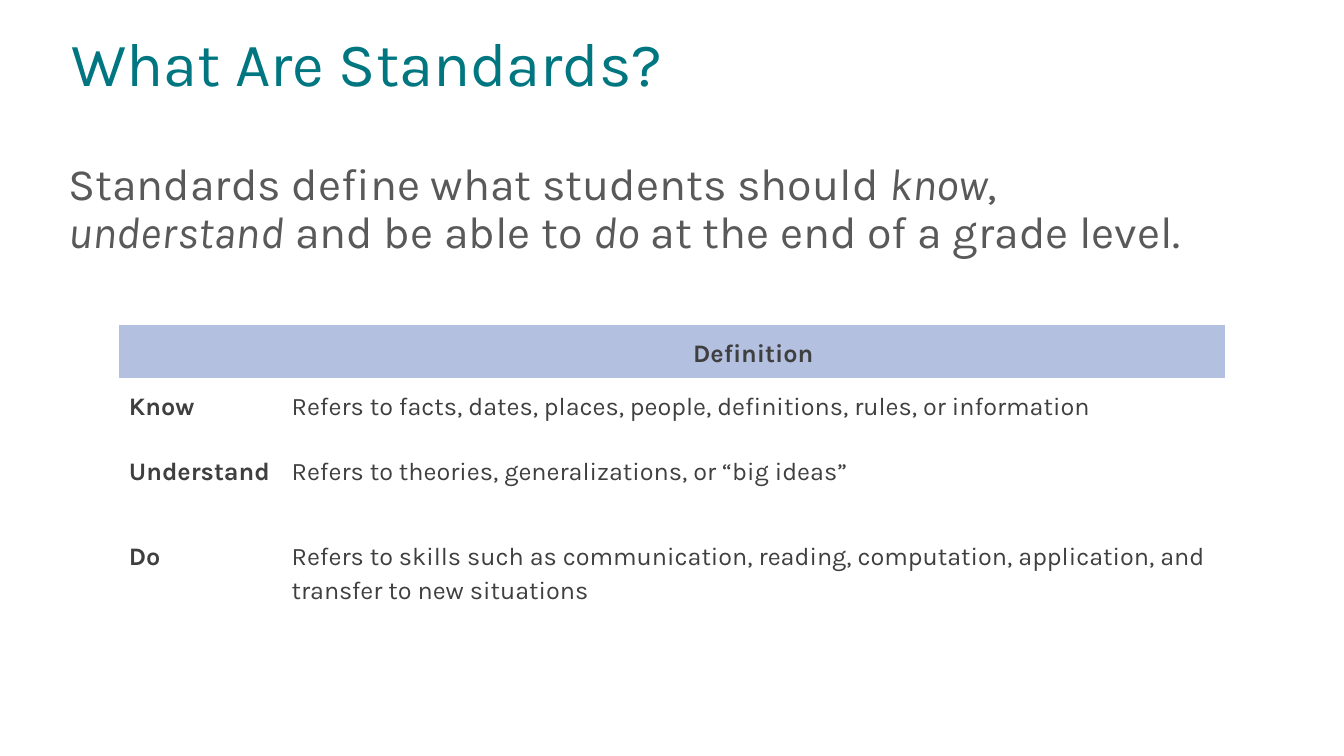
from pptx import Presentation
from pptx.dml.color import RGBColor
from pptx.enum.text import MSO_ANCHOR, PP_ALIGN
from pptx.util import Cm, Pt

LEFT, CENTER = PP_ALIGN.LEFT, PP_ALIGN.CENTER
TOP = MSO_ANCHOR.TOP
NO_STYLE_NO_GRID = "{2D5ABB26-0587-4C30-8999-92F81FD0307C}"


def color(hex_code):
    return RGBColor.from_string(hex_code)


def write(paragraph, text, *, size, ink, font="Karla", bold=False, italic=False,
          align=LEFT, spacing=1.0):
    """Append one formatted run to a paragraph."""
    paragraph.alignment = align
    paragraph.line_spacing = spacing
    run = paragraph.add_run()
    run.text = text
    run.font.name = font
    run.font.size = Pt(size)
    run.font.bold = bold
    run.font.italic = italic
    run.font.color.rgb = color(ink)


class StandardsSlide:
    TEAL = "007780"
    GREY = "595959"
    DARK = "3F3F3F"
    HEADER = "B3C0DF"

    def __init__(self, deck):
        self.slide = deck.slides.add_slide(deck.slide_layouts[6])

    def text(self, left, top, width, height, runs, *, size, ink):
        """Place a one-paragraph box; runs are (text, italic) pairs."""
        box = self.slide.shapes.add_textbox(Cm(left), Cm(top), Cm(width), Cm(height))
        frame = box.text_frame
        frame.word_wrap = True
        frame.vertical_anchor = TOP
        for words, italic in runs:
            write(frame.paragraphs[0], words, size=size, ink=ink,
                  italic=italic, spacing=0.9)

    def table(self, left, top, widths, heights, rows):
        """Place a table with a tinted header row and a bold first column."""
        frame = self.slide.shapes.add_table(
            len(rows), len(widths), Cm(left), Cm(top), Cm(sum(widths)), Cm(sum(heights)))
        grid = frame.table
        grid.horz_banding = False
        grid._tbl.tblPr[0].text = NO_STYLE_NO_GRID
        for column, width in zip(grid.columns, widths):
            column.width = Cm(width)
        for r, (height, row) in enumerate(zip(heights, rows)):
            grid.rows[r].height = Cm(height)
            for c, words in enumerate(row):
                self.cell(grid.cell(r, c), words, header=r == 0, label=c == 0)

    def cell(self, cell, words, *, header, label):
        cell.margin_left = cell.margin_right = Cm(0.25)
        cell.margin_top = cell.margin_bottom = Cm(0.25)
        cell.vertical_anchor = TOP
        if header:
            cell.fill.solid()
            cell.fill.fore_color.rgb = color(self.HEADER)
        else:
            cell.fill.background()
        if words:
            write(cell.text_frame.paragraphs[0], words, size=18, ink=self.DARK,
                  bold=header or label, align=CENTER if header else LEFT, spacing=1.15)


def main():
    deck = Presentation()
    deck.slide_width, deck.slide_height = Cm(33.87), Cm(19.05)
    page = StandardsSlide(deck)

    # Definitions table
    definitions = [
        ("", "Definition"),
        ("Know", "Refers to facts, dates, places, people, definitions, rules, or information"),
        ("Understand", "Refers to theories, generalizations, or “big ideas”"),
        ("Do", "Refers to skills such as communication, reading, computation, "
               "application, and transfer to new situations"),
    ]
    page.table(3, 8.18, [4.1, 23.77], [1.27, 1.63, 2.13, 2.31], definitions)

    # Title
    page.text(1.55, 0.71, 24.97, 3.66, [("What Are Standards?", False)],
              size=44, ink=page.TEAL)

    # Statement
    statement = [
        ("Standards define what students should", False),
        (" know", True),
        (", ", False),
        ("understand", True),
        (" and be able to ", False),
        ("do", True),
        (" at the end of a grade level.", False),
    ]
    page.text(1.47, 3.94, 29.39, 12.17, statement, size=32, ink=page.GREY)

    deck.save("out.pptx")


if __name__ == "__main__":
    main()
